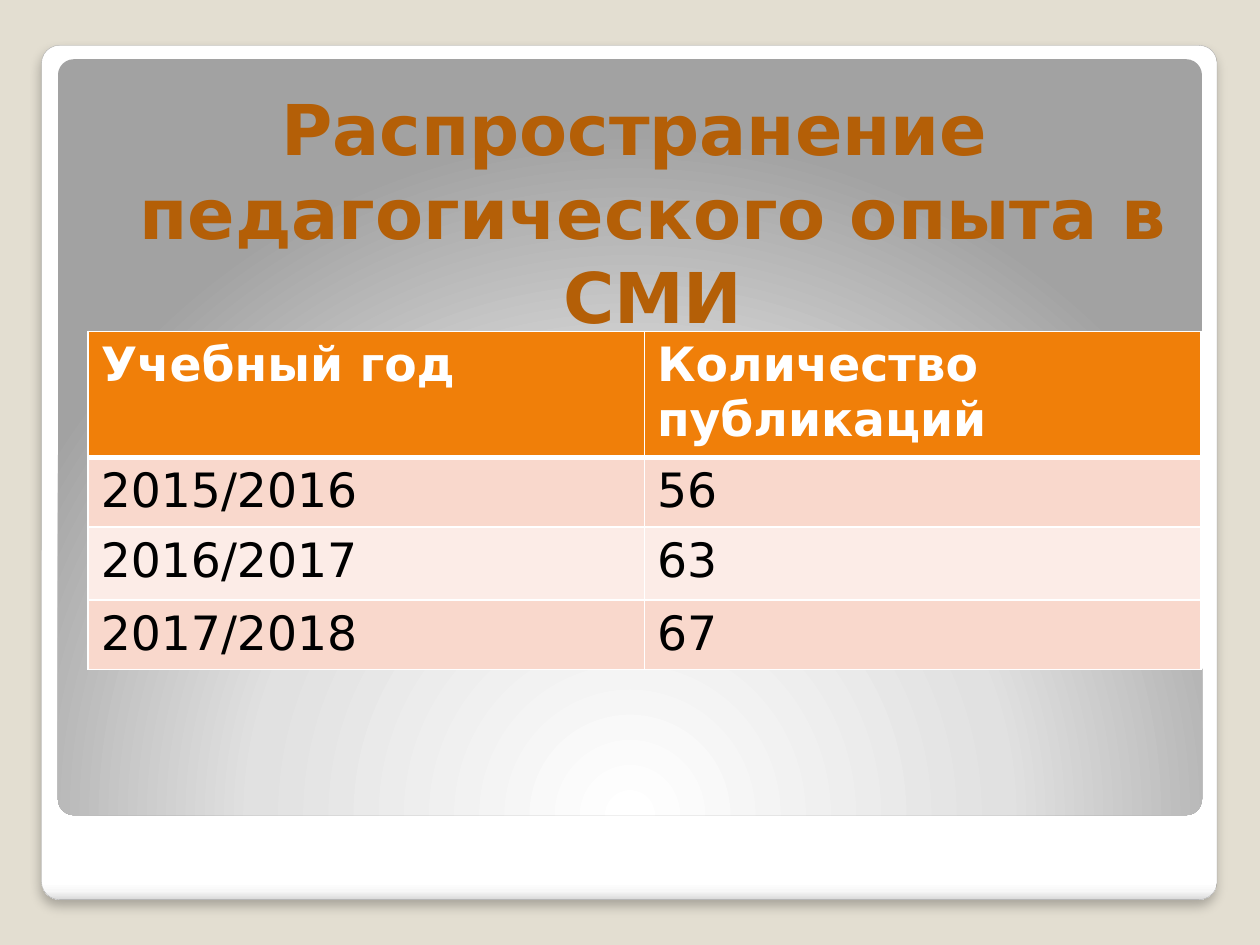
from typing import NamedTuple

from lxml import etree
from pptx import Presentation
from pptx import util as u
from pptx.dml.color import RGBColor
from pptx.enum import shapes, text
from pptx.oxml import parse_xml
from pptx.oxml.ns import nsdecls, qn

FONT = "DejaVu Sans"
WHITE = "FFFFFF"
CENTRE_BELOW = ('<a:path path="circle">'
                '<a:fillToRect l="50000" t="175000" r="50000" b="-75000"/></a:path>')
DOWNWARD = '<a:lin ang="5400000" scaled="0"/>'


class Panel(NamedTuple):
    left: float
    top: float
    width: float
    height: float
    stops: list[tuple[int, str]]
    direction: str


class RowStyle(NamedTuple):
    height: float
    fill: str
    ink: str
    bold: bool
    bottom_line: int


FRAME = Panel(0.33, 0.36, 9.33, 6.78,
              [(0, WHITE), (98, WHITE), (99, "F7F7F7"), (100, "DADADA")], DOWNWARD)
INNER = Panel(0.46, 0.47, 9.08, 6,
              [(0, WHITE), (55, "E1E1E1"), (100, "A2A2A2")], CENTRE_BELOW)

ROWS = [("Учебный год", "Количество публикаций"),
        ("2015/2016", "56"), ("2016/2017", "63"), ("2017/2018", "67")]
STYLES = [RowStyle(0.92, "F07F09", WHITE, True, 3),
          RowStyle(0.5, "F9D8CC", "000000", False, 1),
          RowStyle(0.58, "FCECE7", "000000", False, 1),
          RowStyle(0.52, "F9D8CC", "000000", False, 1)]


def colour(value: str) -> RGBColor:
    return RGBColor.from_string(value)


def set_font(para, size: float, ink: str, bold: bool) -> None:
    para.font.name = FONT
    para.font.size = u.Pt(size)
    para.font.bold = bold
    para.font.color.rgb = colour(ink)


def add_panel(page, panel: Panel):
    box = page.shapes.add_shape(
        shapes.MSO_SHAPE.ROUNDED_RECTANGLE, u.Inches(panel.left), u.Inches(panel.top),
        u.Inches(panel.width), u.Inches(panel.height))
    box.adjustments[0] = 0.021
    box.shadow.inherit = False
    box.line.fill.background()
    box.fill.background()
    stops = "".join(f'<a:gs pos="{pos * 1000}"><a:srgbClr val="{value}"/></a:gs>'
                    for pos, value in panel.stops)
    properties = box.fill._xPr
    properties.replace(properties.find(qn("a:noFill")), parse_xml(
        f'<a:gradFill {nsdecls("a")} rotWithShape="1"><a:gsLst>{stops}</a:gsLst>'
        f'{panel.direction}</a:gradFill>'))
    return box


def add_frame(page) -> None:
    """Draw the white frame with its thin outline and soft shadow."""
    frame = add_panel(page, FRAME)
    frame.line.color.rgb = colour("A4A4A4")
    frame.line.width = u.Pt(0.16)
    effects = frame._element.spPr.find(qn("a:effectLst"))
    effects.append(parse_xml(
        f'<a:outerShdw {nsdecls("a")} blurRad="{u.Pt(6)}" dist="{u.Pt(4)}" '
        'dir="5400000" algn="t" rotWithShape="0">'
        '<a:srgbClr val="000000"><a:alpha val="25000"/></a:srgbClr></a:outerShdw>'))


def add_title(page) -> None:
    box = page.shapes.add_textbox(u.Inches(0.47), u.Inches(0.58),
                                  u.Inches(9.03), u.Inches(5.28))
    frame = box.text_frame
    frame.word_wrap = True
    frame.margin_left, frame.margin_right = u.Inches(0.2), u.Inches(0.1)
    frame.margin_top, frame.margin_bottom = u.Inches(0.1), u.Inches(0.05)
    para = frame.paragraphs[0]
    para.text = "Распространение педагогического опыта в СМИ"
    para.alignment = text.PP_ALIGN.CENTER
    para.space_before = u.Pt(2.5)
    hanging = u.Inches(0.29)
    properties = para._p.get_or_add_pPr()
    properties.set("marL", str(hanging))
    properties.set("indent", str(-hanging))
    set_font(para, 40, "B45F07", True)


def set_borders(cell, bottom_line: int, top_line: int) -> None:
    widths = {"lnL": 1, "lnR": 1, "lnT": top_line, "lnB": bottom_line}
    properties = cell._tc.get_or_add_tcPr()
    for index, (side, width) in enumerate(widths.items()):
        border = etree.Element(qn(f"a:{side}"), w=str(u.Pt(width)))
        fill = etree.SubElement(border, qn("a:solidFill"))
        etree.SubElement(fill, qn("a:srgbClr"), val=WHITE)
        properties.insert(index, border)


def add_publications(page) -> None:
    height = sum(style.height for style in STYLES)
    table = page.shapes.add_table(len(ROWS), 2, u.Inches(0.7), u.Inches(2.63),
                                  u.Inches(8.83), u.Inches(height)).table
    top_line = 1
    for row, values, style in zip(table.rows, ROWS, STYLES):
        row.height = u.Inches(style.height)
        for cell, value in zip(row.cells, values):
            cell.text = value
            cell.fill.solid()
            cell.fill.fore_color.rgb = colour(style.fill)
            set_font(cell.text_frame.paragraphs[0], 27, style.ink, style.bold)
            set_borders(cell, style.bottom_line, top_line)
        top_line = style.bottom_line


def main() -> None:
    deck = Presentation()
    deck.slide_width, deck.slide_height = u.Inches(10), u.Inches(7.5)
    page = deck.slides.add_slide(deck.slide_layouts[6])
    page.background.fill.solid()
    page.background.fill.fore_color.rgb = colour("E3DED1")
    add_frame(page)
    add_panel(page, INNER)
    add_title(page)
    add_publications(page)
    deck.save("out.pptx")


if __name__ == "__main__":
    main()
